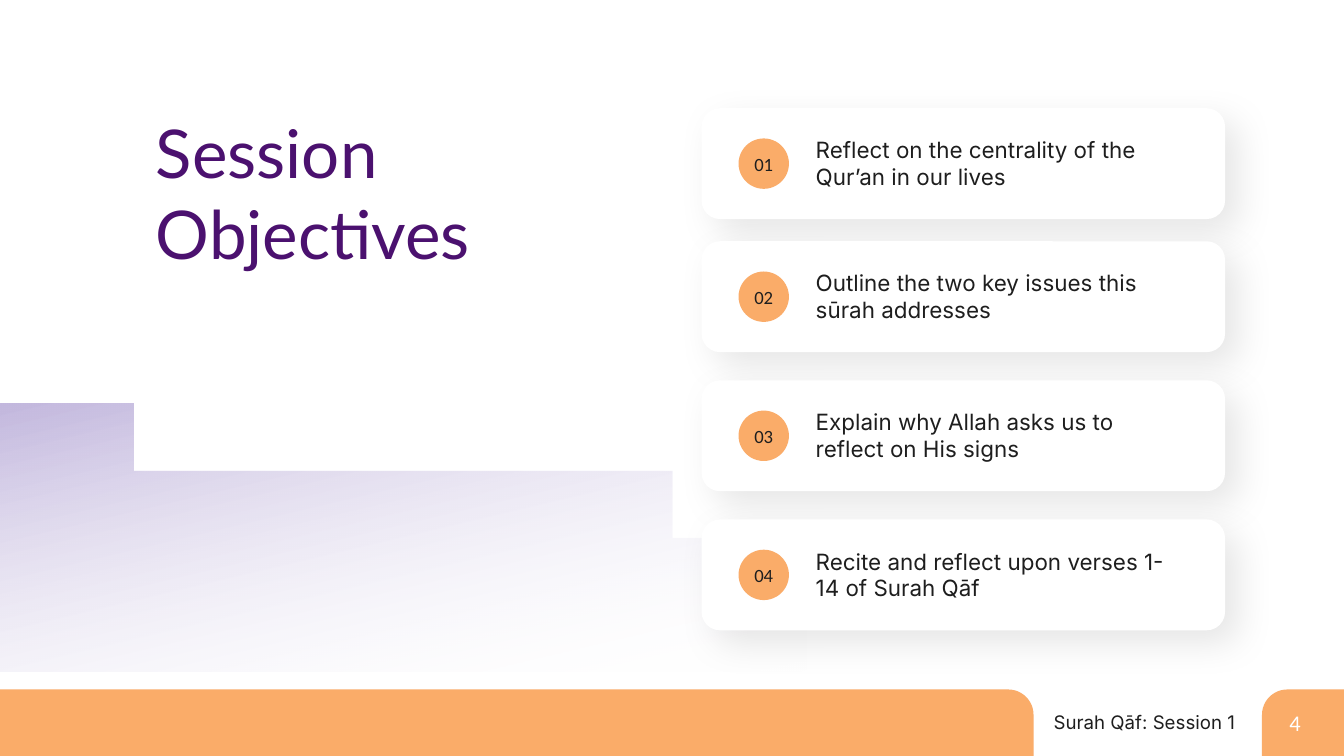
from lxml import etree
from pptx import Presentation
from pptx.dml.color import RGBColor
from pptx.enum.shapes import MSO_SHAPE as Shape
from pptx.enum.text import MSO_ANCHOR as Anchor, MSO_AUTO_SIZE as AutoSize, PP_ALIGN as Align
from pptx.oxml import parse_xml
from pptx.oxml.ns import nsdecls, qn
from pptx.util import Inches, Pt

COLORS = {"orange": "FAAC69", "purple": "4B116F", "lilac": "C3B8DE",
          "ink": "1E1E1E", "white": "FFFFFF", "shadow": "000000"}

OBJECTIVES = [
    (1.61, "Reflect on the centrality of the Qur’an in our lives"),
    (3.59, "Outline the two key issues this sūrah addresses"),
    (5.66, "Explain why Allah asks us to reflect on His signs"),
    (7.73, "Recite and reflect upon verses 1-14 of Surah Qāf"),
]

WAVE_START = (0.26, 6.34)
WAVE_CURVES = [
    ((1.27, 6.31), (2.61, 6.8), (3.66, 6.98)),
    ((4.93, 7.2), (5.76, 6.93), (6.78, 6.88)),
    ((7.79, 6.83), (8.98, 6.99), (10.14, 7.62)),
    ((11.15, 8.16), (12.13, 9.04), (12.38, 10.01)),
]
WAVE_BASE = [(12.41, 10.19), (-0.02, 10.22), (-0.01, 6.37)]
CURVE_STEPS = 16


def rgb(name):
    return RGBColor.from_string(COLORS[name])


def add_block(shapes, kind, left, top, width, height, color):
    block = shapes.add_shape(kind, Inches(left), Inches(top), Inches(width), Inches(height))
    block.shadow.inherit = False
    block.fill.solid()
    block.fill.fore_color.rgb = rgb(color)
    block.line.fill.background()
    return block


def write_text(frame, lines, size, font, color, align=Align.LEFT):
    frame.word_wrap = True
    frame.auto_size = AutoSize.NONE
    frame.vertical_anchor = Anchor.TOP
    for index, line in enumerate(lines):
        para = frame.add_paragraph() if index else frame.paragraphs[0]
        para.text = line
        para.alignment = align
        para.line_spacing = 1.0
        para.space_before = Pt(0)
        para.font.size = Pt(size)
        para.font.name = font
        para.font.color.rgb = rgb(color)


def add_text(shapes, left, top, width, height, text, *style):
    box = shapes.add_textbox(Inches(left), Inches(top), Inches(width), Inches(height))
    write_text(box.text_frame, [text], *style)


def add_soft_shadow(shape):
    effects = shape._element.spPr.find(qn("a:effectLst"))
    effects.append(parse_xml(
        f'<a:outerShdw {nsdecls("a")} blurRad="{Pt(40)}" dist="{Pt(20)}" dir="2700000" '
        f'algn="tl" rotWithShape="0"><a:srgbClr val="{COLORS["shadow"]}">'
        '<a:alpha val="10000"/></a:srgbClr></a:outerShdw>'))


def bezier_points(start, first, second, end):
    for step in range(1, CURVE_STEPS + 1):
        t = step / CURVE_STEPS
        weights = ((1 - t) ** 3, 3 * t * (1 - t) ** 2, 3 * t ** 2 * (1 - t), t ** 3)
        corners = (start, first, second, end)
        yield tuple(sum(w * point[axis] for w, point in zip(weights, corners))
                    for axis in (0, 1))


def add_wave(page):
    points = []
    start = WAVE_START
    for curve in WAVE_CURVES:
        points += bezier_points(start, *curve)
        start = curve[-1]
    builder = page.shapes.build_freeform(*WAVE_START, scale=Inches(1))
    builder.add_line_segments(points + WAVE_BASE, close=True)
    wave = builder.convert_to_shape()
    wave.shadow.inherit = False
    wave.line.fill.background()
    wave.fill.gradient()
    wave.fill.gradient_angle = 283.3
    for stop, color in zip(wave.fill.gradient_stops, ("lilac", "white")):
        stop.color.rgb = rgb(color)
    clear = wave._element.spPr.findall(".//" + qn("a:srgbClr"))[-1]
    etree.SubElement(clear, qn("a:alpha")).set("val", "0")


def add_footer(page):
    tab = add_block(page.shapes, Shape.ROUND_1_RECTANGLE, 18.78, 10.26, 1.22, 0.99, "orange")
    tab._element.spPr.find(qn("a:xfrm")).set("flipH", "1")
    bar = add_block(page.shapes, Shape.ROUND_1_RECTANGLE, 0, 10.26, 15.38, 0.99, "orange")
    for block in (tab, bar):
        block.adjustments[0] = 0.38
    add_text(page.shapes, 14.87, 10.53, 3.61, 0.44, "Surah Qāf: Session 1",
             20, "Inter", "ink", Align.RIGHT)
    add_text(page.shapes, 19.09, 10.5, 0.61, 0.5, "4", 24, "Calibri", "white")


def add_title(page, lines):
    title = page.shapes.title
    title.left, title.top = Inches(2.22), Inches(1.61)
    title.width, title.height = Inches(8.22), Inches(2.52)
    write_text(title.text_frame, lines, 72, "Lato", "purple")


def add_objective(page, number, top, text):
    shapes = page.shapes.add_group_shape().shapes
    card = add_block(shapes, Shape.ROUNDED_RECTANGLE, 10.44, top, 7.79, 1.65, "white")
    add_soft_shadow(card)
    add_block(shapes, Shape.OVAL, 10.99, top + 0.45, 0.75, 0.75, "orange")
    add_text(shapes, 10.99, top + 0.61, 0.75, 0.44, f"{number:02}",
             20, "Calibri", "ink", Align.CENTER)
    add_text(shapes, 12.04, top + 0.37, 5.71, 0.91, text, 24, "Inter", "ink")


def main():
    deck = Presentation()
    deck.slide_width, deck.slide_height = Inches(20), Inches(11.25)
    page = deck.slides.add_slide(deck.slide_layouts[5])
    add_footer(page)
    add_wave(page)
    add_title(page, ["Session", "Objectives"])
    for number, (top, text) in enumerate(OBJECTIVES, start=1):
        add_objective(page, number, top, text)
    deck.save("out.pptx")


if __name__ == "__main__":
    main()
